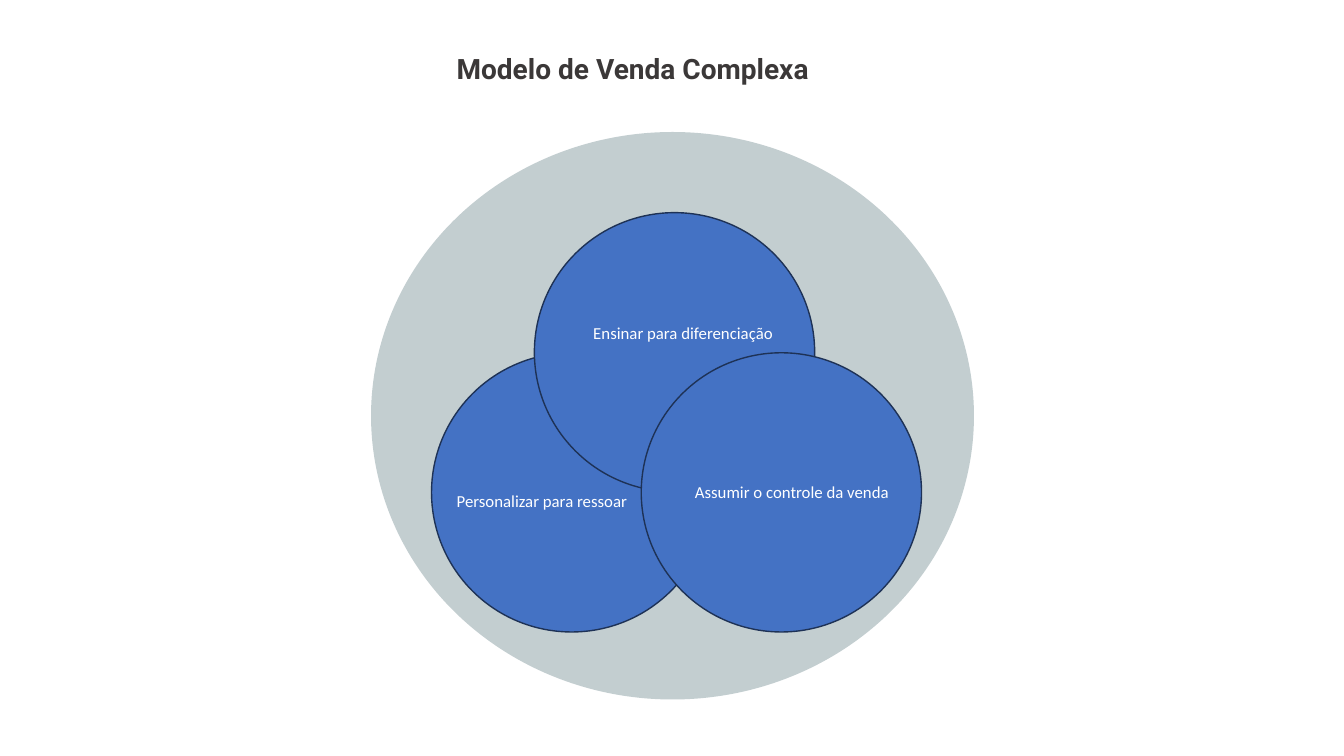
"""Build the complex sales model slide with three overlapping circles."""
from pptx import Presentation, util as u
from pptx.dml.color import RGBColor
from pptx.enum import shapes, text

WHITE = RGBColor(0xFF, 0xFF, 0xFF)
CHARCOAL = RGBColor(0x3B, 0x38, 0x38)
GREY = RGBColor(0xC3, 0xCE, 0xD0)
BLUE = RGBColor(0x44, 0x72, 0xC4)
NAVY = RGBColor(0x1E, 0x32, 0x56)


class SlideBuilder:
    def __init__(self, slide):
        self.s = slide
        self.label_font = "Calibri"
        self.title_font = "Roboto"

    def ellipse(self, x, y, w, h, fill, line=None):
        sp = self.s.shapes.add_shape(
            shapes.MSO_SHAPE.OVAL, u.Inches(x), u.Inches(y), u.Inches(w), u.Inches(h))
        sp.shadow.inherit = False
        sp.fill.solid()
        sp.fill.fore_color.rgb = fill
        if line is None:
            sp.line.fill.background()
        else:
            sp.line.color.rgb = line
            sp.line.width = u.Pt(1)

    def textbox(self, x, y, w, h, words, font, size, color, align, bold=False):
        sp = self.s.shapes.add_textbox(u.Inches(x), u.Inches(y), u.Inches(w), u.Inches(h))
        tf = sp.text_frame
        tf.word_wrap = True
        tf.auto_size = text.MSO_AUTO_SIZE.SHAPE_TO_FIT_TEXT
        tf.text = words
        p = tf.paragraphs[0]
        p.alignment = align
        r = p.runs[0]
        r.font.name = font
        r.font.size = u.Pt(size)
        r.font.bold = bold
        r.font.color.rgb = color

    def title(self, x, y, w, h, words):
        self.textbox(x, y, w, h, words, self.title_font, 20, CHARCOAL,
                     text.PP_ALIGN.LEFT, bold=True)

    def label(self, x, y, words):
        self.textbox(x, y, 3.81, 0.3, words, self.label_font, 12, WHITE,
                     text.PP_ALIGN.CENTER)


def main():
    prs = Presentation()
    prs.slide_width, prs.slide_height = u.Inches(13.33), u.Inches(7.5)
    b = SlideBuilder(prs.slides.add_slide(prs.slide_layouts[6]))

    b.title(4.43, 0.46, 3.87, 0.44, "Modelo de Venda Complexa")
    b.ellipse(3.68, 1.31, 5.98, 5.63, GREY)
    for x, y in [(4.28, 3.5), (5.3, 2.11), (6.36, 3.5)]:
        b.ellipse(x, y, 2.78, 2.77, BLUE, NAVY)
    for x, y, words in [
        (4.87, 3.15, "Ensinar para diferenciação"),
        (3.47, 4.82, "Personalizar para ressoar"),
        (5.95, 4.73, "Assumir o controle da venda"),
    ]:
        b.label(x, y, words)

    prs.save("out.pptx")


if __name__ == "__main__":
    main()
